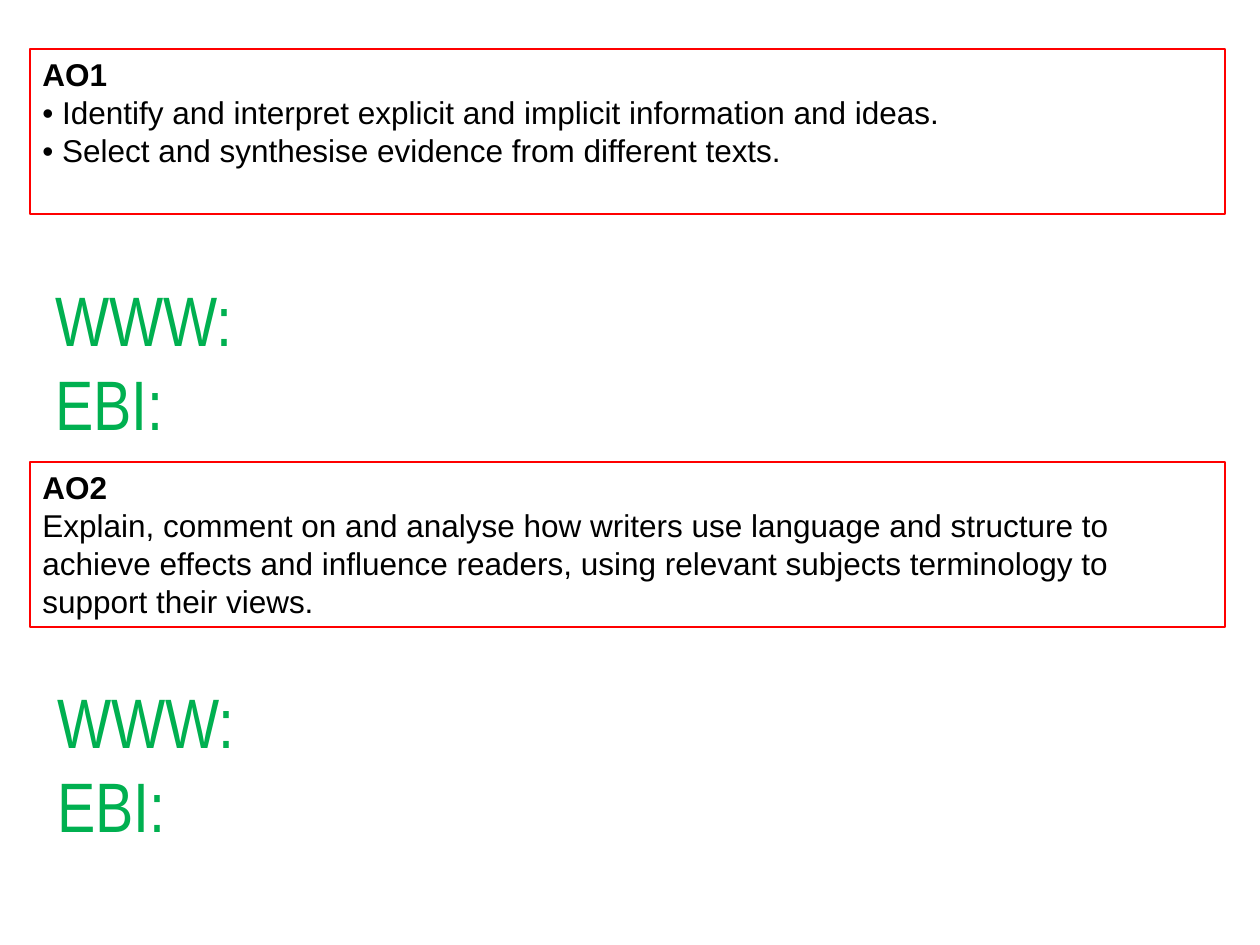
from pptx import Presentation
from pptx.dml.color import RGBColor
from pptx.enum.shapes import MSO_SHAPE
from pptx.enum.text import MSO_ANCHOR, PP_ALIGN
from pptx.util import Pt

RECTANGLE = MSO_SHAPE.RECTANGLE
TOP = MSO_ANCHOR.TOP
LEFT = PP_ALIGN.LEFT
PX = 914400 / 126


def px(*lengths):
    """Turn pixel lengths into EMU."""
    return [round(length * PX) for length in lengths]


def write(box, lines, font, size, color, bold_first=False):
    """Fill a box with one left-aligned paragraph per line."""
    frame = box.text_frame
    frame.word_wrap = True
    frame.vertical_anchor = TOP
    for index, line in enumerate(lines):
        para = frame.paragraphs[0] if index == 0 else frame.add_paragraph()
        para.alignment = LEFT
        span = para.add_run()
        span.text = line
        span.font.name = font
        span.font.size = Pt(size)
        span.font.bold = bold_first and index == 0
        span.font.color.rgb = RGBColor.from_string(color)


deck = Presentation()
deck.slide_width, deck.slide_height = px(1260, 945)
page = deck.slides.add_slide(deck.slide_layouts[6])

objectives = [
    (49, [
        "AO1",
        "• Identify and interpret explicit and implicit information and ideas.",
        "• Select and synthesise evidence from different texts.",
    ]),
    (462, [
        "AO2",
        "Explain, comment on and analyse how writers use language and structure "
        "to achieve effects and influence readers, using relevant subjects "
        "terminology to support their views.",
    ]),
]
for top, lines in objectives:
    box = page.shapes.add_shape(RECTANGLE, *px(30, top, 1195, 165))
    box.shadow.inherit = False
    box.fill.background()
    box.line.color.rgb = RGBColor.from_string("FF0000")
    box.line.width = Pt(0.75)
    write(box, lines, "Arial", 18, "000000", bold_first=True)

for left, top in [(43, 270), (45, 672)]:
    box = page.shapes.add_textbox(*px(left, top, 1166, 183))
    write(box, ["WWW:", "EBI:"], "Arial Narrow", 40, "00B050")

deck.save("out.pptx")
